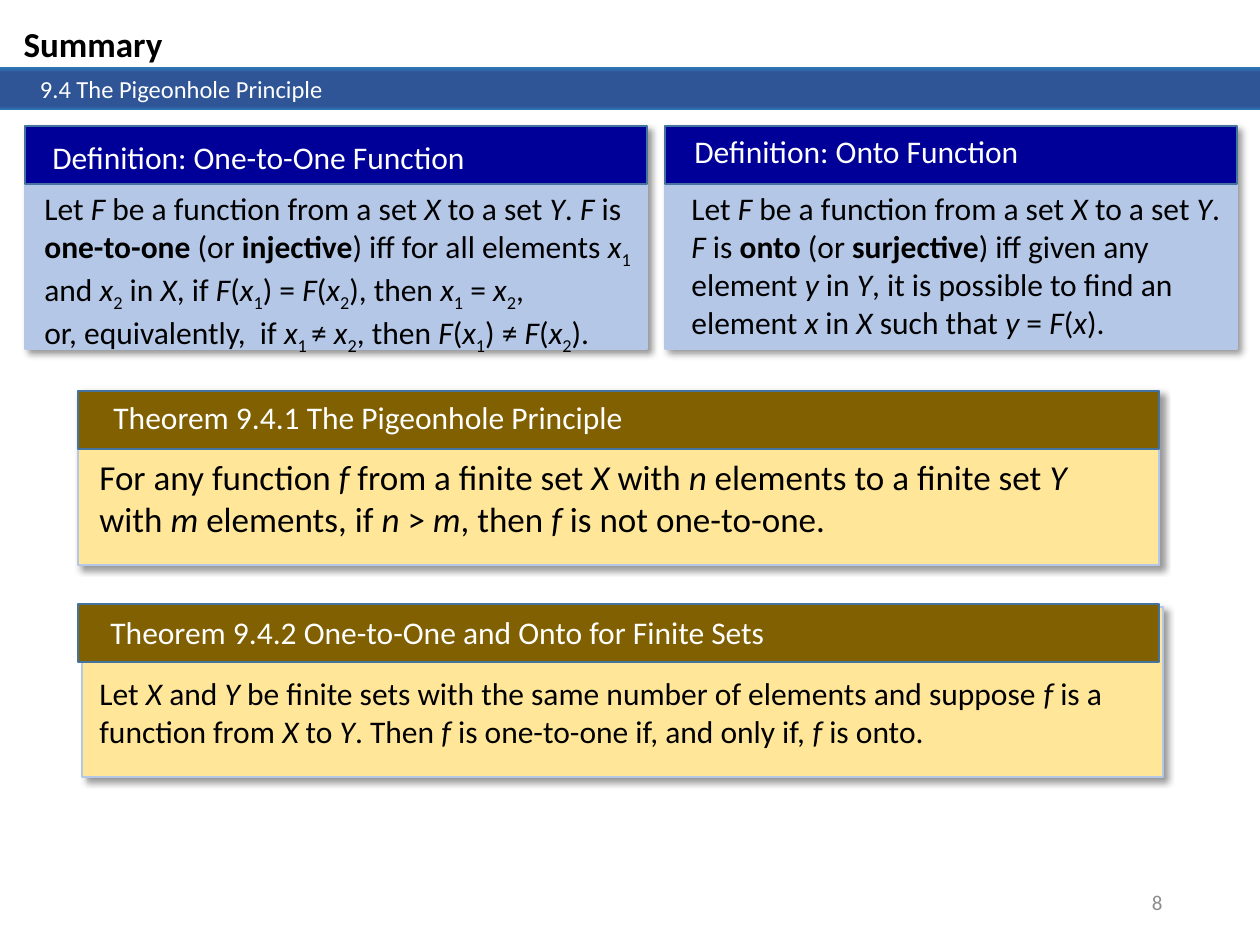
from lxml import etree
from pptx import Presentation
from pptx.dml.color import RGBColor
from pptx.enum.shapes import MSO_SHAPE
from pptx.enum.text import MSO_ANCHOR, MSO_AUTO_SIZE, PP_ALIGN
from pptx.oxml.ns import qn
from pptx.util import Pt

RECT = MSO_SHAPE.RECTANGLE
LEFT, RIGHT = PP_ALIGN.LEFT, PP_ALIGN.RIGHT
TOP, MIDDLE = MSO_ANCHOR.TOP, MSO_ANCHOR.MIDDLE
GROW, FIXED = MSO_AUTO_SIZE.SHAPE_TO_FIT_TEXT, MSO_AUTO_SIZE.NONE
PX = 914400 / 126
FONT = "Calibri"
HEAD_H = 58

COLORS = {
    "black": "000000", "white": "FFFFFF", "gray": "8C8C8C",
    "edge": "2E75B6", "band": "2F5597",
    "navy": "000099", "sky": "B4C7E7", "rim": "43739E",
    "brown": "806000", "cream": "FFE699",
}
STOPS = [(0, "edge"), (11, "band"), (91, "band"), (100, "edge")]
BANDS = [(0, 67, 1260, 38), (0, 68, 1260, 42)]

# Marks in text: * italic, # bold, _ subscript
MARKS = {"*": "italic", "#": "bold", "_": "sub"}

CARDS = [
    {"panel": (25, 126, 622, 223), "head": (25, 126),
     "label": (40, 132, 504, 50), "body": (32, 183, 615, 165),
     "dark": "navy", "light": "sky", "size": 18,
     "title": "Definition: One-to-One Function",
     "text": ["Let *F* be a function from a set *X* to a set *Y*. *F* is "
              "#one-to-one #(or #injective#) iff for all elements *x*_1_ and "
              "*x*_2_ in *X*, if *F*(*x*_1_) = *F*(*x*_2_), then "
              "*x*_1_ = *x*_2_,",
              "or, equivalently,  if *x*_1 _≠ *x*_2_, then "
              "*F*(*x*_1_) ≠ *F*(*x*_2_)."]},
    {"panel": (665, 126, 572, 223), "head": (665, 126),
     "label": (682, 126, 438, 50), "body": (679, 183, 558, 165),
     "dark": "navy", "light": "sky", "size": 18,
     "title": "Definition: Onto Function",
     "text": ["Let *F* be a function from a set *X* to a set *Y*. *F* is "
              "#onto #(or #surjective#) iff given any element *y* in *Y*, "
              "it is possible to find an element *x* in *X* such that "
              "*y* = *F*(*x*)."]},
    {"panel": (78, 391, 1081, 174), "head": (78, 391),
     "label": (101, 392, 751, 50), "body": (87, 449, 1055, 97),
     "dark": "brown", "light": "cream", "size": 20,
     "title": "Theorem 9.4.1 The Pigeonhole Principle",
     "text": ["For any function *f* from a finite set *X* with *n* elements "
              "to a finite set *Y* with *m* elements, if *n* > *m*, then "
              "*f* is not one-to-one."]},
    {"panel": (82, 607, 1081, 170), "head": (78, 604),
     "label": (98, 607, 931, 50), "body": (87, 668, 1055, 89),
     "dark": "brown", "light": "cream", "size": 18,
     "title": "Theorem 9.4.2 One-to-One and Onto for Finite Sets",
     "text": ["Let *X* and *Y* be finite sets with the same number of "
              "elements and suppose *f* is a function from *X* to *Y*. Then "
              "*f* is one-to-one if, and only if, *f* is onto."]},
]


def emu(box):
    return [round(n * PX) for n in box]


def rgb(name):
    return RGBColor.from_string(COLORS[name])


def split(text):
    on, part = set(), ""
    for char in text:
        if char in MARKS:
            if part:
                yield part, set(on)
            on ^= {MARKS[char]}
            part = ""
        else:
            part += char
    if part:
        yield part, on


def write(shape, lines, size=18, color="black", bold=False, align=LEFT,
          anchor=TOP, fit=GROW):
    frame = shape.text_frame
    frame.word_wrap = True
    frame.auto_size = fit
    frame.vertical_anchor = anchor
    for i, line in enumerate(lines):
        para = frame.add_paragraph() if i else frame.paragraphs[0]
        para.alignment = align
        para.line_spacing = 1.0
        for part, on in split(line):
            run = para.add_run()
            run.text = part
            font = run.font
            font.name, font.size = FONT, Pt(size)
            font.color.rgb = rgb(color)
            font.bold = bold or "bold" in on
            font.italic = "italic" in on
            if "sub" in on:
                run._r.get_or_add_rPr().set("baseline", "-25000")


def add_rect(shapes, box, fill, line):
    shape = shapes.add_shape(RECT, *emu(box))
    shape.shadow.inherit = False
    shape.fill.solid()
    shape.fill.fore_color.rgb = rgb(fill)
    shape.line.color.rgb = rgb(line)
    shape.line.width = Pt(1)
    return shape


def add_shadow(shape):
    effects = shape._element.spPr.find(qn("a:effectLst"))
    outer = etree.SubElement(effects, qn("a:outerShdw"), blurRad=str(Pt(4)),
                             dist=str(Pt(3)), dir="2700000", algn="tl",
                             rotWithShape="0")
    tone = etree.SubElement(outer, qn("a:srgbClr"), val=COLORS["black"])
    etree.SubElement(tone, qn("a:alpha"), val="40000")


def add_band(shapes, box):
    shape = shapes.add_shape(RECT, *emu(box))
    shape.shadow.inherit = False
    shape.line.fill.background()
    shape.fill.gradient()
    shape.fill.gradient_angle = 270
    stops = next(shape._element.spPr.iter(qn("a:gsLst")))
    for old in list(stops):
        stops.remove(old)
    for pos, name in STOPS:
        stop = etree.SubElement(stops, qn("a:gs"), pos=str(pos * 1000))
        etree.SubElement(stop, qn("a:srgbClr"), val=COLORS[name])
    return shape


def add_card(slide, card):
    shapes = slide.shapes.add_group_shape().shapes
    add_shadow(add_rect(shapes, card["panel"], card["light"], "sky"))
    head = (*card["head"], card["panel"][2], HEAD_H)
    add_rect(shapes, head, card["dark"], "rim")
    write(shapes.add_textbox(*emu(card["label"])), [card["title"]],
          color="white")
    write(shapes.add_textbox(*emu(card["body"])), card["text"],
          size=card["size"])


def main():
    deck = Presentation()
    deck.slide_width, deck.slide_height = emu((1260, 945))
    slide = deck.slides.add_slide(deck.slide_layouts[5])
    title = slide.shapes.title
    title.left, title.top, title.width, title.height = emu((11, 16, 339, 55))
    write(title, ["Summary"], size=20, bold=True)

    for box in BANDS:
        band = add_band(slide.shapes, box)
    band.text_frame.margin_left = round(40 * PX)
    write(band, ["9.4 The Pigeonhole Principle"], size=14, color="white",
          fit=FIXED)

    for card in CARDS:
        add_card(slide, card)

    number = slide.shapes.add_textbox(*emu((892, 877, 283, 50)))
    write(number, ["8"], size=12, color="gray", align=RIGHT, anchor=MIDDLE,
          fit=FIXED)
    deck.save("out.pptx")


if __name__ == "__main__":
    main()
